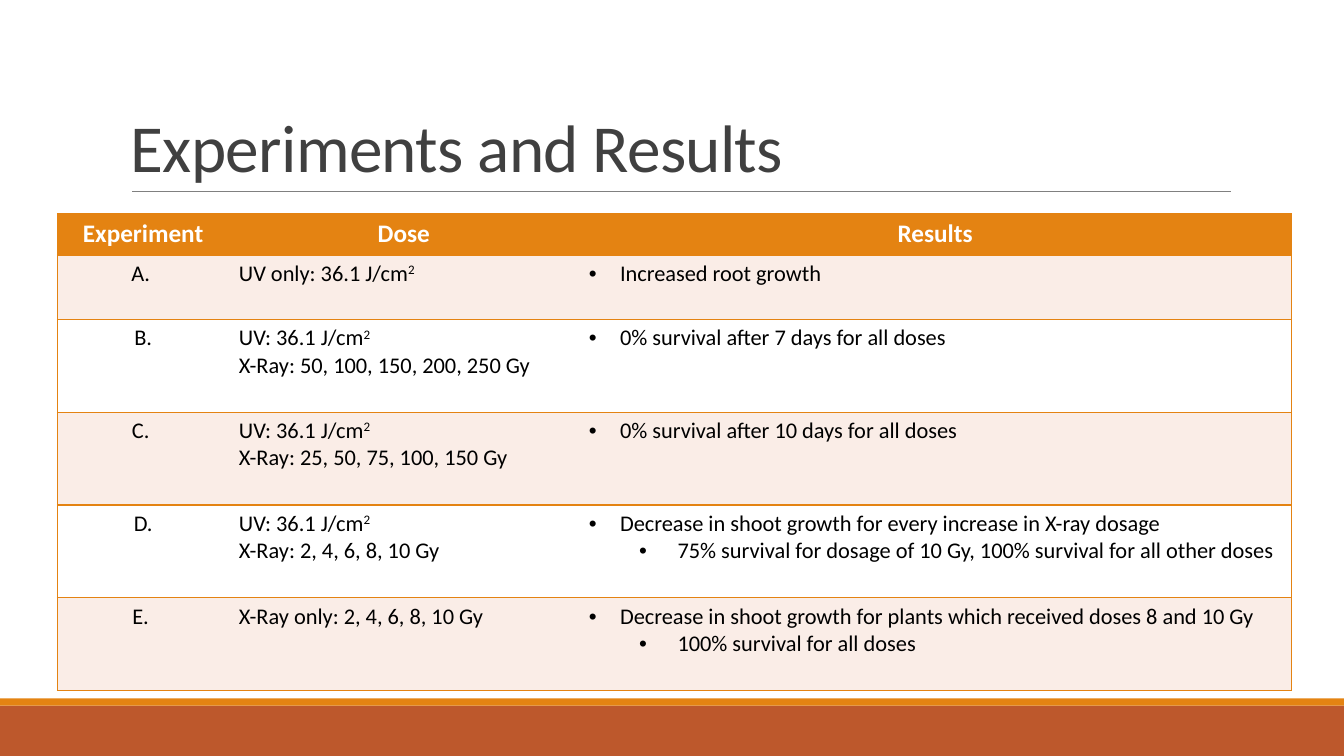
"""Build the Experiments and Results slide."""
from dataclasses import dataclass

import pptx
import pptx.dml.color
import pptx.enum.shapes
import pptx.enum.text
import pptx.oxml
import pptx.oxml.ns
import pptx.util
from pptx.util import Inches

COLORS = {
    "orange": "E48312", "rust": "BD582C", "rule": "808080", "title": "404040",
    "band": "FAEDE7", "white": "FFFFFF", "black": "000000",
}
FONT = "Calibri"
HEADERS = ["Experiment", "Dose", "Results"]
COL_WIDTHS = [1.7, 3.47, 7.07]
ROW_HEIGHTS = [0.41, 0.64] + [0.92] * 4
INDENTS = [(0.31, -0.31), (0.88, -0.38)]


@dataclass
class Bar:
    top: float
    height: float
    color: str


@dataclass
class Experiment:
    label: str
    doses: list[str]
    results: list[str]


BARS = [Bar(7, 0.5, "rust"), Bar(6.93, 0.07, "orange")]
UV_DOSE = "UV: 36.1 J/cm^2"
EXPERIMENTS = [
    Experiment("A. ", ["UV only: 36.1 J/cm^2"], ["Increased root growth"]),
    Experiment("B.", [UV_DOSE, "X-Ray: 50, 100, 150, 200, 250 Gy"],
               ["0% survival after 7 days for all doses"]),
    Experiment("C. ", [UV_DOSE, "X-Ray: 25, 50, 75, 100, 150 Gy"],
               ["0% survival after 10 days for all doses"]),
    Experiment("D.", [UV_DOSE, "X-Ray: 2, 4, 6, 8, 10 Gy"],
               ["Decrease in shoot growth for every increase in X-ray dosage",
                "75% survival for dosage of 10 Gy, 100% survival for all other doses"]),
    Experiment("E. ", ["X-Ray only: 2, 4, 6, 8, 10 Gy"],
               ["Decrease in shoot growth for plants which received doses 8 and 10 Gy",
                "100% survival for all doses"]),
]


def rgb(name: str) -> pptx.dml.color.RGBColor:
    return pptx.dml.color.RGBColor.from_string(COLORS[name])


def style_run(r, size: float, color: str, bold: bool = False) -> None:
    r.font.name = FONT
    r.font.size = pptx.util.Pt(size)
    r.font.bold = bold
    r.font.color.rgb = rgb(color)


def add_bar(slide, bar: Bar) -> None:
    sp = slide.shapes.add_shape(
        pptx.enum.shapes.MSO_SHAPE.RECTANGLE,
        0, Inches(bar.top), Inches(13.33), Inches(bar.height))
    sp.shadow.inherit = False
    sp.fill.solid()
    sp.fill.fore_color.rgb = rgb(bar.color)
    sp.line.fill.background()


def add_rule(slide) -> None:
    line = slide.shapes.add_connector(
        pptx.enum.shapes.MSO_CONNECTOR.STRAIGHT,
        Inches(1.31), Inches(1.9), Inches(12.21), Inches(1.9))
    line.line.color.rgb = rgb("rule")
    line.line.width = pptx.util.Pt(0.5)
    pptx.oxml.ns.qn("a:effectLst")
    line._element.spPr.append(pptx.oxml.parse_xml(
        f'<a:effectLst {pptx.oxml.ns.nsdecls("a")}/>'))


def add_title(slide) -> None:
    sp = slide.shapes.add_textbox(Inches(1.2), Inches(0.31), Inches(11), Inches(1.59))
    tf = sp.text_frame
    tf.word_wrap = True
    tf.vertical_anchor = pptx.enum.text.MSO_ANCHOR.BOTTOM
    tf.text = "Experiments and Results"
    p = tf.paragraphs[0]
    p.line_spacing = 0.85
    r = p.runs[0]
    style_run(r, 48, "title")
    r._r.get_or_add_rPr().set("spc", "-50")


def set_borders(cell, visible: str) -> None:
    tc_pr = cell._tc.get_or_add_tcPr()
    for side in "LRTB":
        paint = (f'<a:solidFill><a:srgbClr val="{COLORS["orange"]}"/></a:solidFill>'
                 if side in visible else "<a:noFill/>")
        tc_pr.append(pptx.oxml.parse_xml(
            f'<a:ln{side} {pptx.oxml.ns.nsdecls("a")} w="12700">{paint}</a:ln{side}>'))


def set_bullet(p, level: int) -> None:
    left, hanging = INDENTS[level]
    p.level = level
    p_pr = p._p.get_or_add_pPr()
    p_pr.set("marL", str(Inches(left)))
    p_pr.set("indent", str(Inches(hanging)))
    for xml in ('<a:buFont {} typeface="Arial"/>', '<a:buChar {} char="•"/>'):
        p_pr.append(pptx.oxml.parse_xml(xml.format(pptx.oxml.ns.nsdecls("a"))))


def fill_cell(cell, lines: list[str], row: int, col: int) -> None:
    header = row == 0
    set_borders(cell, "TB" + {0: "L", 2: "R"}.get(col, ""))
    cell.fill.solid()
    cell.fill.fore_color.rgb = rgb("orange" if header else "band" if row % 2 else "white")
    tf = cell.text_frame
    for i, text in enumerate(lines):
        p = tf.add_paragraph() if i else tf.paragraphs[0]
        if header or col == 0:
            p.alignment = pptx.enum.text.PP_ALIGN.CENTER
        elif col == 2:
            set_bullet(p, i)
        for j, part in enumerate(text.split("^")):
            r = p.add_run()
            r.text = part
            style_run(r, 18 if header else 16, "white" if header else "black", header)
            if j:
                r._r.get_or_add_rPr().set("baseline", "30000")


def add_results_table(slide) -> None:
    rows = [[[h] for h in HEADERS]]
    rows += [[[e.label], e.doses, e.results] for e in EXPERIMENTS]
    table = slide.shapes.add_table(
        len(rows), len(HEADERS), Inches(0.57), Inches(2.12),
        Inches(sum(COL_WIDTHS)), Inches(sum(ROW_HEIGHTS))).table
    table.horz_banding = False
    for column, width in zip(table.columns, COL_WIDTHS):
        column.width = Inches(width)
    for i, (cells, height) in enumerate(zip(rows, ROW_HEIGHTS)):
        table.rows[i].height = Inches(height)
        for j, lines in enumerate(cells):
            fill_cell(table.cell(i, j), lines, i, j)


def main() -> None:
    prs = pptx.Presentation()
    prs.slide_width, prs.slide_height = Inches(13.33), Inches(7.5)
    slide = prs.slides.add_slide(prs.slide_layouts[6])
    for bar in BARS:
        add_bar(slide, bar)
    add_rule(slide)
    add_title(slide)
    add_results_table(slide)
    prs.save("out.pptx")


if __name__ == "__main__":
    main()
